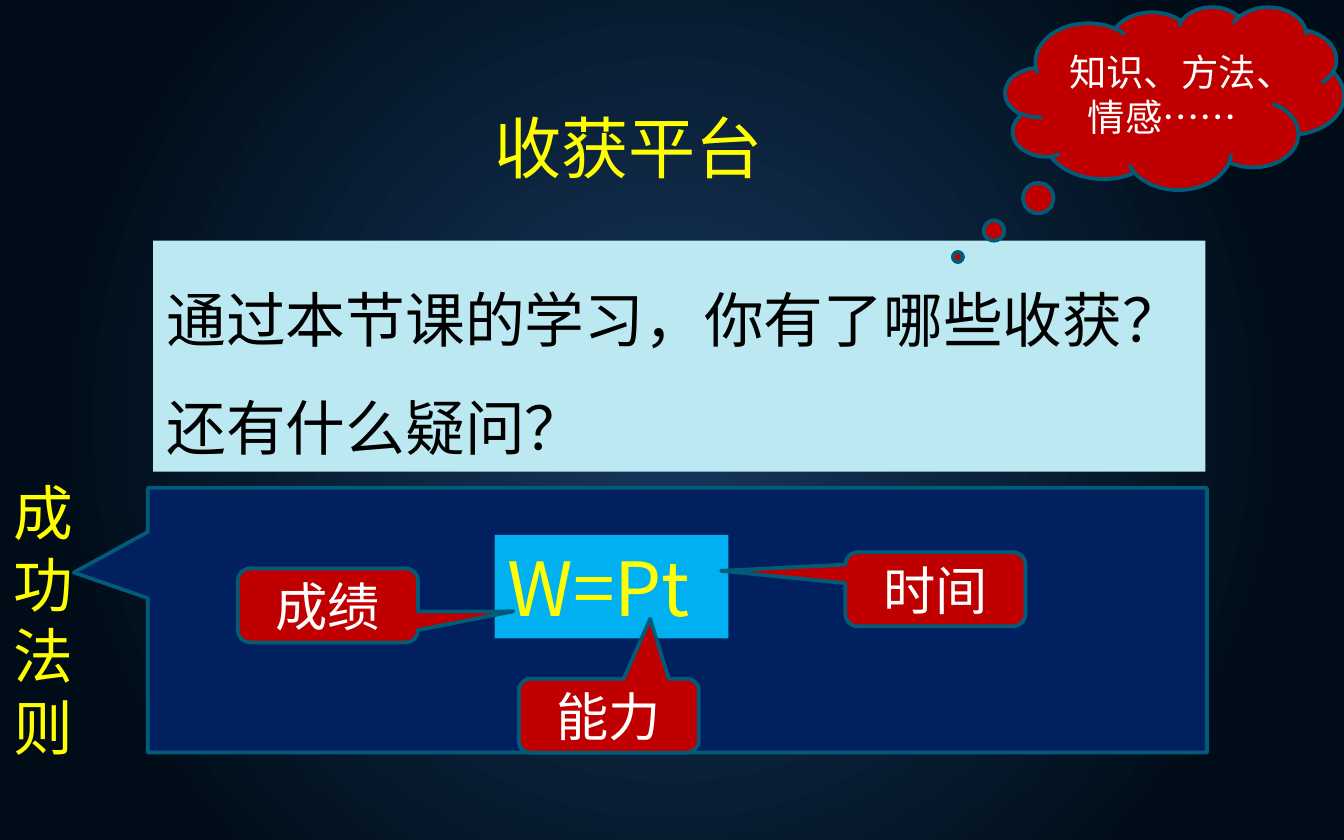
from lxml import etree
from pptx import Presentation
from pptx.dml.color import RGBColor
from pptx.enum.shapes import MSO_SHAPE as SHAPE
from pptx.enum.text import MSO_ANCHOR as ANCHOR, MSO_AUTO_SIZE as FIT, PP_ALIGN as ALIGN
from pptx.oxml import parse_xml
from pptx.oxml.ns import nsdecls, qn
from pptx.util import Inches, Pt

FONT = "Noto Sans CJK SC"
YELLOW, WHITE, BLACK = "FFFF00", "FFFFFF", "000000"
RED, NAVY, PALE, SKY, EDGE = "C00000", "002060", "BCE8F2", "00B0F0", "005C79"


def rgb(value):
    return RGBColor.from_string(value)


class SlideBuilder:
    def __init__(self, prs):
        self.s = prs.slides.add_slide(prs.slide_layouts[6])

    def background(self, inner, outer, stop):
        """Circular gradient from the centre of the slide."""
        self.s._element.cSld.insert(0, parse_xml(
            f'<p:bg {nsdecls("p", "a")}><p:bgPr><a:gradFill rotWithShape="1"><a:gsLst>'
            f'<a:gs pos="0"><a:srgbClr val="{inner}"/></a:gs>'
            f'<a:gs pos="{stop * 1000}"><a:srgbClr val="{outer}"/></a:gs></a:gsLst>'
            '<a:path path="circle"><a:fillToRect l="50000" t="50000" r="50000" b="50000"/>'
            '</a:path></a:gradFill><a:effectLst/></p:bgPr></p:bg>'))

    def fill_text(self, tf, lines, size, color, frame, para):
        for name, value in frame.items():
            setattr(tf, name, value)
        for i, line in enumerate(lines):
            p = tf.paragraphs[0] if i == 0 else tf.add_paragraph()
            for name, value in para.items():
                setattr(p, name, value)
            r = p.add_run()
            r.text = line
            for name, value in {"size": Pt(size), "name": FONT}.items():
                setattr(r.font, name, value)
            r.font.color.rgb = rgb(color)
            etree.SubElement(r._r.get_or_add_rPr(), qn("a:ea"), typeface=FONT)

    def text(self, box, lines, size, color, fill=None, spacing=None):
        """Text box that grows with its lines, optionally filled."""
        sp = self.s.shapes.add_textbox(*map(Inches, box))
        if fill:
            sp.fill.solid()
            sp.fill.fore_color.rgb = rgb(fill)
        self.fill_text(sp.text_frame, lines, size, color,
                       {"word_wrap": False, "auto_size": FIT.SHAPE_TO_FIT_TEXT},
                       {"alignment": ALIGN.LEFT, "line_spacing": spacing})

    def callout(self, kind, box, tip, fill, label=None, size=28):
        """Outlined callout whose tip is given as a share of its size."""
        sp = self.s.shapes.add_shape(kind, *map(Inches, box))
        sp.shadow.inherit = False
        sp.fill.solid()
        sp.fill.fore_color.rgb = rgb(fill)
        sp.line.color.rgb = rgb(EDGE)
        sp.line.width = Pt(2)
        for i, value in enumerate(tip):
            sp.adjustments[i] = value
        if label:
            self.fill_text(sp.text_frame, [label], size, WHITE,
                           {"word_wrap": True, "vertical_anchor": ANCHOR.MIDDLE},
                           {"alignment": ALIGN.CENTER})


def main():
    prs = Presentation()
    prs.slide_width, prs.slide_height = Inches(10), Inches(6.25)
    slide = SlideBuilder(prs)
    slide.background("17375E", "000D18", 80)

    # Rule of success: panel and vertical caption
    slide.callout(SHAPE.RECTANGULAR_CALLOUT, (1.1, 3.63, 7.88, 1.97), (-0.57, -0.18), NAVY)
    slide.text((0, 3.49, 0.65, 2.25), "成功法则", 32, YELLOW)

    # Question and title
    slide.text((1.14, 1.79, 7.83, 1.72),
               ["通过本节课的学习，你有了哪些收获？", "还有什么疑问？"],
               32, BLACK, PALE, 1.5)
    slide.text((3.58, 0.74, 2.22, 0.71), ["收获平台"], 36, YELLOW)

    # Thought cloud
    slide.callout(SHAPE.CLOUD_CALLOUT, (7.48, 0.05, 2.52, 1.36), (-0.64, 0.87),
                  RED, "知识、方法、情感……", 20)

    # Formula and the meaning of its letters
    slide.text((3.68, 3.98, 1.74, 0.77), ["W=Pt"], 40, YELLOW, SKY)
    for label, left, top, tip in [("成绩", 1.77, 4.23, (1.03, 0.08)),
                                  ("能力", 3.86, 5.05, (0.23, -1.31)),
                                  ("时间", 6.29, 4.11, (-1.19, -0.25))]:
        slide.callout(SHAPE.ROUNDED_RECTANGULAR_CALLOUT, (left, top, 1.34, 0.55), tip, RED, label)

    prs.save("out.pptx")


if __name__ == "__main__":
    main()
